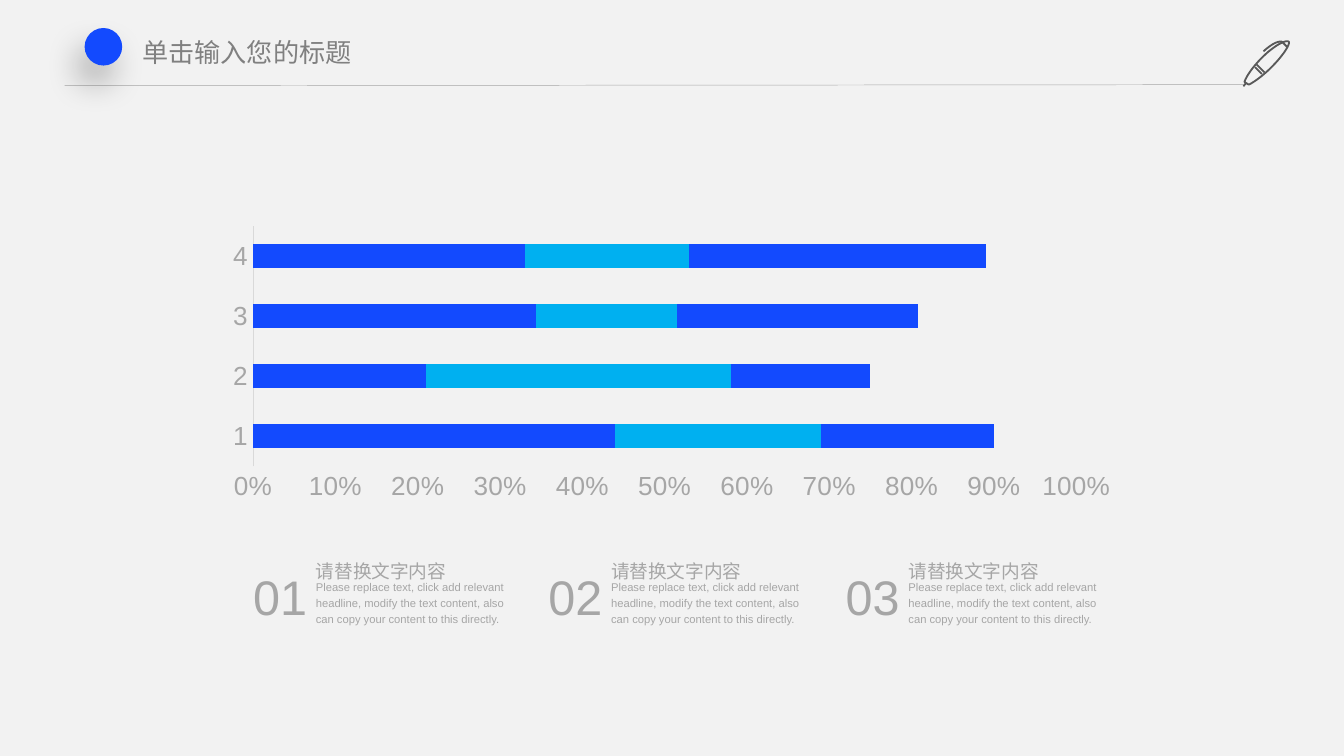
from dataclasses import dataclass

from lxml.etree import SubElement
from pptx import Presentation
from pptx.chart.data import CategoryChartData
from pptx.dml.color import RGBColor
from pptx.enum.chart import XL_CHART_TYPE, XL_TICK_MARK
from pptx.enum.shapes import MSO_CONNECTOR, MSO_SHAPE
from pptx.enum.text import MSO_AUTO_SIZE, PP_ALIGN
from pptx.oxml.ns import qn
from pptx.slide import Slide
from pptx.util import Cm, Pt

BACKGROUND = "F2F2F2"
BLUE = "134AFE"
CYAN = "00B0F0"
GREY = "A6A6A6"
LATIN = "Arial"
CHINESE = "Noto Sans CJK SC"

Point = tuple[float, float]


@dataclass
class TextStyle:
    size: float
    color: str = GREY
    font: str = LATIN
    align: PP_ALIGN = PP_ALIGN.LEFT
    line_spacing: float = 1.0
    space_before: float = 0


@dataclass
class Note:
    number: str
    left: float
    heading: str = "请替换文字内容"
    body: str = (
        "Please replace text, click add relevant headline, modify the text "
        "content, also can copy your content to this directly."
    )


@dataclass
class Stack:
    name: str
    values: tuple[int, ...]
    color: str


@dataclass
class Stroke:
    start: Point
    curves: list[tuple[Point, Point, Point]]


TITLE = TextStyle(14, "808080", CHINESE)
NUMBER = TextStyle(26, align=PP_ALIGN.CENTER, line_spacing=1.2)
HEADING = TextStyle(10, line_spacing=1.2, space_before=7.5)
BODY = TextStyle(6, line_spacing=1.2, space_before=7.5)

NOTES = [Note("01", 4.52), Note("02", 10.1), Note("03", 15.72)]

STACKS = [
    Stack("Series 1", (44, 21, 34, 33), BLUE),
    Stack("Series 2", (25, 37, 17, 20), CYAN),
    Stack("Series 3", (21, 17, 29, 36), BLUE),
    Stack("Series 4", (10, 25, 19, 11), BACKGROUND),
]


def straight(start: Point, end: Point) -> Stroke:
    return Stroke(start, [(start, end, end)])


PEN = [
    straight((23.85, 1.4), (23.72, 1.27)),
    straight((23.75, 1.22), (23.9, 1.37)),
    Stroke((24.36, 0.79), [
        ((24.31, 0.74), (24.08, 0.86), (23.85, 1.09)),
        ((23.67, 1.27), (23.55, 1.45), (23.52, 1.55)),
        ((23.52, 1.55), (23.6, 1.6), (23.6, 1.6)),
        ((23.67, 1.57), (23.85, 1.45), (24.03, 1.27)),
        ((24.26, 1.04), (24.38, 0.84), (24.36, 0.79)),
    ]),
    straight((23.55, 1.57), (23.5, 1.63)),
    Stroke((24.33, 0.89), [
        ((24.33, 0.89), (24.28, 0.84), (24.23, 0.79)),
        ((24.23, 0.79), (24.13, 0.74), (23.88, 0.97)),
    ]),
]


def rgb(value: str) -> RGBColor:
    return RGBColor.from_string(value)


def add_text(slide: Slide, text: str, box: tuple[float, float, float, float],
             style: TextStyle, inset: Point = (0, 0), wrap: bool = True) -> None:
    frame = slide.shapes.add_textbox(*map(Cm, box)).text_frame
    frame.word_wrap = wrap
    frame.auto_size = MSO_AUTO_SIZE.SHAPE_TO_FIT_TEXT
    frame.margin_left = frame.margin_right = Cm(inset[0])
    frame.margin_top = frame.margin_bottom = Cm(inset[1])
    paragraph = frame.paragraphs[0]
    paragraph.text = text
    paragraph.alignment = style.align
    paragraph.line_spacing = style.line_spacing
    paragraph.space_before = Pt(style.space_before)
    paragraph.font.size = Pt(style.size)
    paragraph.font.name = style.font
    paragraph.font.color.rgb = rgb(style.color)


def sample(stroke: Stroke, steps: int = 12) -> list[Point]:
    points = [stroke.start]
    for first, second, end in stroke.curves:
        start = points[-1]
        for step in range(1, steps + 1):
            t = step / steps
            weights = ((1 - t) ** 3, 3 * t * (1 - t) ** 2, 3 * t * t * (1 - t), t ** 3)
            corners = (start, first, second, end)
            points.append((sum(w * c[0] for w, c in zip(weights, corners)),
                           sum(w * c[1] for w, c in zip(weights, corners))))
    return points


def add_pen(slide: Slide) -> None:
    units = 1000
    outlines = [[(x * units, y * units) for x, y in sample(stroke)] for stroke in PEN]
    builder = slide.shapes.build_freeform(*outlines[0][0], scale=Cm(1) / units)
    for outline in outlines:
        builder.move_to(*outline[0])
        builder.add_line_segments(outline[1:], close=False)
    pen = builder.convert_to_shape()
    pen.shadow.inherit = False
    pen.fill.background()
    pen.line.color.rgb = rgb("595959")
    pen.line.width = Pt(1)


def add_header(slide: Slide) -> None:
    rule = slide.shapes.add_connector(
        MSO_CONNECTOR.STRAIGHT, Cm(1.22), Cm(1.62), Cm(23.5), Cm(1.6))
    rule.line.color.rgb = rgb(GREY)
    rule.line.width = Pt(0.25)
    SubElement(rule._element.spPr, qn("a:effectLst"))
    add_pen(slide)
    add_text(slide, "单击输入您的标题", (2.46, 0.58, 6.17, 0.81), TITLE, (0.23, 0.1))

    dot = slide.shapes.add_shape(MSO_SHAPE.OVAL, Cm(1.6), Cm(0.53), Cm(0.71), Cm(0.71))
    dot.fill.solid()
    dot.fill.fore_color.rgb = rgb(BLUE)
    dot.line.fill.background()
    dot.shadow.inherit = False
    effects = dot._element.spPr.find(qn("a:effectLst"))
    shadow = SubElement(effects, qn("a:outerShdw"), blurRad=str(Pt(18)),
                        dist=str(Pt(11)), dir=str(113 * 60000), rotWithShape="0")
    black = SubElement(shadow, qn("a:srgbClr"), val="000000")
    SubElement(black, qn("a:alpha"), val="27000")


def add_bars(slide: Slide) -> None:
    data = CategoryChartData()
    data.categories = ["1", "2", "3", "4"]
    for stack in STACKS:
        data.add_series(stack.name, stack.values)
    chart = slide.shapes.add_chart(
        XL_CHART_TYPE.BAR_STACKED_100, Cm(4.06), Cm(4.17), Cm(17.27), Cm(5.41), data).chart
    chart.has_legend = False
    chart.has_title = False
    chart.font.size = Pt(14)
    chart.font.name = LATIN
    chart.font.color.rgb = rgb(GREY)
    plot = chart.plots[0]
    plot.gap_width = 150
    plot.overlap = 100
    plot.vary_by_categories = False
    for series, stack in zip(plot.series, STACKS):
        series.format.fill.solid()
        series.format.fill.fore_color.rgb = rgb(stack.color)
    for axis in (chart.category_axis, chart.value_axis):
        axis.has_major_gridlines = False
        axis.major_tick_mark = axis.minor_tick_mark = XL_TICK_MARK.NONE
    chart.category_axis.format.line.color.rgb = rgb("D9D9D9")
    chart.category_axis.format.line.width = Pt(0.75)
    chart.value_axis.format.line.fill.background()
    chart.value_axis.tick_labels.number_format = "0%"
    chart.value_axis.tick_labels.number_format_is_linked = False


def add_note(slide: Slide, note: Note) -> None:
    text_left = note.left + 1.45
    add_text(slide, note.number, (note.left, 10.36, 1.55, 1.6), NUMBER, (0.25, 0.13), False)
    add_text(slide, note.body, (text_left, 10.92, 3.6, 0.91), BODY)
    add_text(slide, note.heading, (text_left, 10.49, 3.35, 0.51), HEADING)


def main() -> None:
    presentation = Presentation()
    presentation.slide_width = Cm(25.4)
    presentation.slide_height = Cm(14.29)
    slide = presentation.slides.add_slide(presentation.slide_layouts[6])
    slide.background.fill.solid()
    slide.background.fill.fore_color.rgb = rgb(BACKGROUND)
    add_header(slide)
    add_bars(slide)
    for note in NOTES:
        add_note(slide, note)
    presentation.save("out.pptx")


if __name__ == "__main__":
    main()
